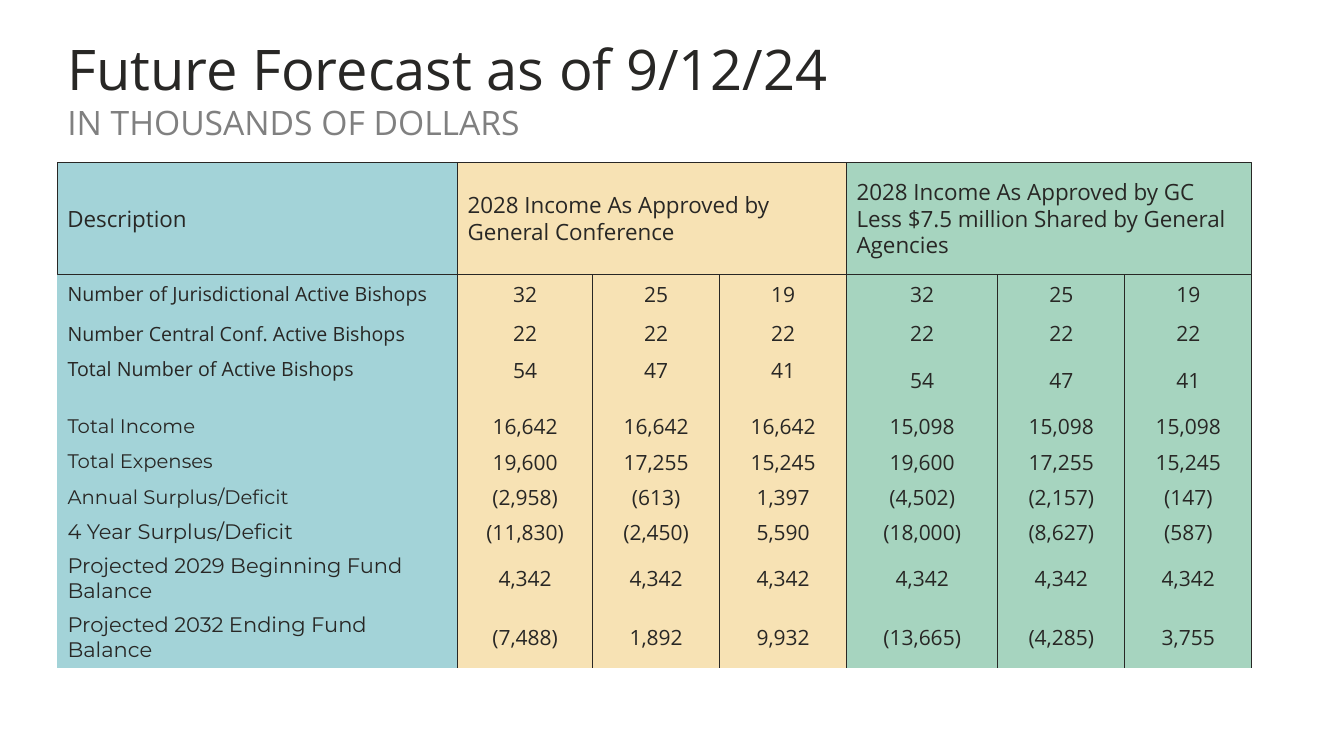
from dataclasses import dataclass
from itertools import accumulate

from lxml import etree
from pptx import Presentation, util as u
from pptx.dml.color import RGBColor
from pptx.enum import shapes, text
from pptx.oxml import ns


@dataclass(frozen=True)
class Theme:
    ink: str = "282725"
    muted: str = "808080"
    blue: str = "A3D3D8"
    sand: str = "F7E2B4"
    green: str = "A6D4BF"
    body_font: str = "Open Sans"
    label_font: str = "Montserrat"
    title: int = 40
    subtitle: int = 24
    header: int = 16
    figure: int = 15
    label: int = 14
    header_line: float = 0.75
    rule: int = 1


THEME = Theme()
GRID_COLUMNS = 40
MIDDLE, TOP = text.MSO_ANCHOR.MIDDLE, text.MSO_ANCHOR.TOP

LEFT, HEADER_TOP, HEADER_HEIGHT = 1.71, 4.83, 3.33
COLUMN_WIDTHS = [11.91, 4.02, 3.78, 3.78, 4.5, 3.78, 3.78]
ROW_HEIGHTS = [1.2, 1.14, 1.68, 1.05, 1.05, 1.05, 1.05, 1.68, 1.83]
GROUPS = [
    ("Description", THEME.blue, 1),
    ("2028 Income As Approved by General Conference", THEME.sand, 3),
    ("2028 Income As Approved by GC Less $7.5 million Shared by General Agencies",
     THEME.green, 3),
]
COLUMN_FILLS = [fill for _, fill, span in GROUPS for _ in range(span)]
FORECAST = [
    ["Number of Jurisdictional Active Bishops", "32", "25", "19", "32", "25", "19"],
    ["Number Central Conf. Active Bishops", "22", "22", "22", "22", "22", "22"],
    ["Total Number of Active Bishops", "54", "47", "41", "54", "47", "41"],
    ["Total Income", "16,642", "16,642", "16,642", "15,098", "15,098", "15,098"],
    ["Total Expenses", "19,600", "17,255", "15,245", "19,600", "17,255", "15,245"],
    ["Annual Surplus/Deficit", "(2,958)", "(613)", "1,397", "(4,502)", "(2,157)", "(147)"],
    ["4 Year Surplus/Deficit", "(11,830)", "(2,450)", "5,590", "(18,000)", "(8,627)", "(587)"],
    ["Projected 2029 Beginning Fund Balance"] + ["4,342"] * 6,
    ["Projected 2032 Ending Fund Balance", "(7,488)", "1,892", "9,932",
     "(13,665)", "(4,285)", "3,755"],
]
TOTAL_BISHOPS_ROW, FIRST_MONEY_ROW, FIRST_LARGE_LABEL_ROW = 2, 3, 6


class Slide:
    def __init__(self, deck, theme):
        self.theme = theme
        self.unit = deck.slide_width / GRID_COLUMNS
        self.page = deck.slides.add_slide(deck.slide_layouts[6])

    def lengths(self, *units):
        return [u.Emu(round(value * self.unit)) for value in units]

    def set_words(self, frame, words, size, color=None, font=None,
                  align=text.PP_ALIGN.LEFT, spacing=None):
        para = frame.paragraphs[0]
        para.text = words
        para.alignment = align
        para.line_spacing = spacing
        para.font.size = u.Pt(size)
        para.font.name = font or self.theme.body_font
        para.font.color.rgb = RGBColor.from_string(color or self.theme.ink)

    def text(self, place, words, size, color, anchor=TOP, spacing=None):
        frame = self.page.shapes.add_textbox(*self.lengths(*place)).text_frame
        frame.word_wrap = True
        frame.vertical_anchor = anchor
        self.set_words(frame, words, size, color, spacing=spacing)

    def header(self, place, words, fill):
        box = self.page.shapes.add_shape(
            shapes.MSO_SHAPE.RECTANGLE, *self.lengths(*place))
        box.shadow.inherit = False
        box.fill.solid()
        box.fill.fore_color.rgb = RGBColor.from_string(fill)
        box.line.color.rgb = RGBColor.from_string(self.theme.ink)
        box.line.width = u.Pt(self.theme.header_line)
        box.text_frame.word_wrap = True
        box.text_frame.vertical_anchor = MIDDLE
        self.set_words(box.text_frame, words, self.theme.header)

    def table(self, left, top, widths, heights):
        place = self.lengths(left, top, sum(widths), sum(heights))
        table = self.page.shapes.add_table(len(heights), len(widths), *place).table
        table.first_row = table.horz_banding = False
        for column, width in zip(table.columns, self.lengths(*widths)):
            column.width = width
        for row, height in zip(table.rows, self.lengths(*heights)):
            row.height = height
        return table

    def borders(self, cell, ruled_sides):
        properties = cell._tc.get_or_add_tcPr()
        for side in "LRTB":
            line = etree.SubElement(properties, ns.qn(f"a:ln{side}"))
            if side in ruled_sides:
                line.set("w", str(u.Pt(self.theme.rule)))
                fill = etree.SubElement(line, ns.qn("a:solidFill"))
                etree.SubElement(fill, ns.qn("a:srgbClr"), val=self.theme.ink)
            else:
                etree.SubElement(line, ns.qn("a:noFill"))

    def cell(self, cell, words, fill, ruled_sides, anchor, **style):
        self.borders(cell, ruled_sides)
        cell.fill.solid()
        cell.fill.fore_color.rgb = RGBColor.from_string(fill)
        cell.margin_top = cell.margin_bottom = u.Inches(0.03)
        cell.vertical_anchor = anchor
        self.set_words(cell.text_frame, words, **style)


def fill_forecast(slide, table):
    theme = slide.theme
    for row, values in enumerate(FORECAST):
        label_style = dict(
            size=theme.figure if row >= FIRST_LARGE_LABEL_ROW else theme.label,
            font=theme.label_font if row >= FIRST_MONEY_ROW else theme.body_font)
        figure_style = dict(size=theme.figure, align=text.PP_ALIGN.CENTER)
        for column, (words, fill) in enumerate(zip(values, COLUMN_FILLS)):
            raised = row == TOTAL_BISHOPS_ROW and fill != theme.green
            slide.cell(table.cell(row, column), words, fill,
                       "LR" if column else "R", TOP if raised else MIDDLE,
                       **(figure_style if column else label_style))


def main():
    deck = Presentation()
    deck.slide_width, deck.slide_height = u.Inches(13.33), u.Inches(7.5)
    slide = Slide(deck, THEME)
    slide.text((LEFT, 1.17, 34.5, 1.98), "Future Forecast as of 9/12/24",
               THEME.title, THEME.ink, MIDDLE, 0.9)
    slide.text((LEFT, 2.88, 35.07, 1.5), "IN THOUSANDS OF DOLLARS",
               THEME.subtitle, THEME.muted)
    fill_forecast(slide, slide.table(
        LEFT, HEADER_TOP + HEADER_HEIGHT, COLUMN_WIDTHS, ROW_HEIGHTS))

    edges = list(accumulate(COLUMN_WIDTHS, initial=LEFT))
    first = 0
    for words, fill, span in GROUPS:
        width = edges[first + span] - edges[first]
        slide.header((edges[first], HEADER_TOP, width, HEADER_HEIGHT), words, fill)
        first += span
    deck.save("out.pptx")


if __name__ == "__main__":
    main()
